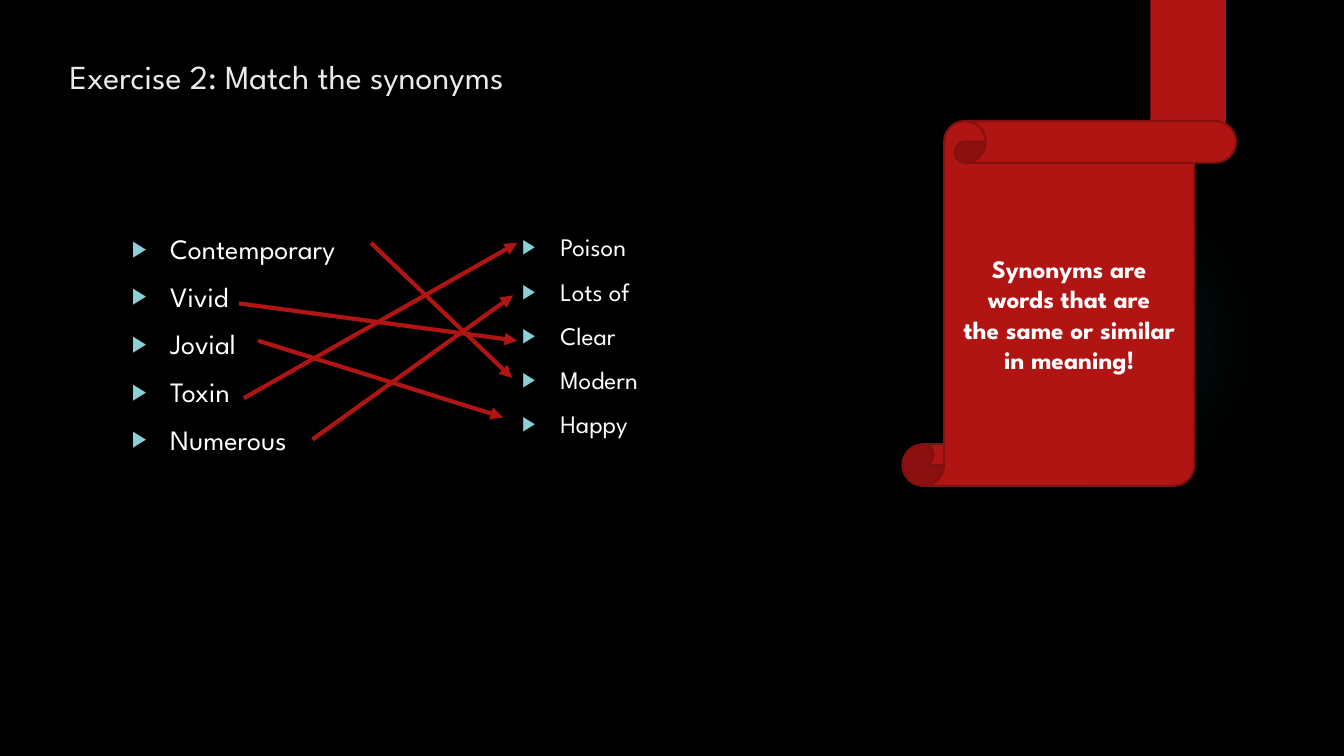
from lxml import etree
from pptx import Presentation
from pptx.dml.color import RGBColor
from pptx.enum.shapes import MSO_CONNECTOR as Connector, MSO_SHAPE as Shape
from pptx.enum.text import MSO_ANCHOR as Anchor, PP_ALIGN as Align
from pptx.oxml import parse_xml
from pptx.oxml.ns import nsdecls, qn
from pptx.util import Inches, Pt

BLACK = RGBColor(0x00, 0x00, 0x00)
WHITE = RGBColor(0xFF, 0xFF, 0xFF)
PALE = RGBColor(0xEB, 0xEB, 0xEB)
RED = RGBColor(0xB0, 0x15, 0x13)
DARK_RED = RGBColor(0x82, 0x10, 0x0E)
AQUA = RGBColor(0x8A, 0xD0, 0xD6)
TEAL = RGBColor(0x50, 0xB9, 0xC1)

FONT = "League Spartan"
LEFT_WORDS = ["Contemporary", "Vivid", "Jovial", "Toxin", "Numerous"]
RIGHT_WORDS = ["Poison", "Lots of", "Clear", "Modern", "Happy"]
MATCHES = [
    (2.47, 0.16, 3.87, 1.5),
    (1.35, 1.13, 3.78, 1.89),
    (1.16, 0.76, 3.92, 1.13),
    (1.21, 1.7, 3.92, 0.16),
    (1.89, 2.11, 3.88, 0.68),
]


def set_values(target, values):
    for name, value in values.items():
        setattr(target, name, value)


def write(para, text, size, color, bold=False):
    para.text = text
    for span in para.runs:
        set_values(span.font, {"name": FONT, "size": Pt(size), "bold": bold})
        span.font.color.rgb = color


def add_plain_shape(page, kind, left, top, width, height):
    shape = page.shapes.add_shape(
        kind, Inches(left), Inches(top), Inches(width), Inches(height))
    shape.shadow.inherit = False
    shape.fill.solid()
    shape.fill.fore_color.rgb = RED
    shape.line.fill.background()
    return shape


def add_backdrop(page, left, top, size):
    glow = add_plain_shape(page, Shape.OVAL, left, top, size, size)
    stops = "".join(
        f'<a:gs pos="{position * 1000}"><a:srgbClr val="{TEAL}">'
        f'<a:alpha val="{alpha * 1000}"/></a:srgbClr></a:gs>'
        for position, alpha in [(0, 7), (36, 6), (69, 0)])
    gradient = parse_xml(
        f'<a:gradFill {nsdecls("a")}><a:gsLst>{stops}</a:gsLst>'
        '<a:path path="circle"><a:fillToRect l="50000" t="50000" '
        'r="50000" b="50000"/></a:path></a:gradFill>')
    properties = glow.element.spPr
    properties.replace(properties.find(qn("a:solidFill")), gradient)
    add_plain_shape(page, Shape.RECTANGLE, left + 2, 0, 0.75, 1.25)


def add_title(page, left, top, width, height):
    title = page.shapes.title
    set_values(title, {"left": Inches(left), "top": Inches(top),
                       "width": Inches(width), "height": Inches(height)})
    title.text_frame.vertical_anchor = Anchor.TOP
    para = title.text_frame.paragraphs[0]
    write(para, "Exercise 2: Match the synonyms", 24, PALE)
    para.alignment = Align.LEFT


def add_bullet(para):
    properties = para._p.get_or_add_pPr()
    indent = Inches(0.38)
    properties.set("marL", str(indent))
    properties.set("indent", str(-indent))
    color = etree.SubElement(properties, qn("a:buClr"))
    etree.SubElement(color, qn("a:srgbClr"), val=str(AQUA))
    etree.SubElement(properties, qn("a:buSzPct"), val="80000")
    etree.SubElement(properties, qn("a:buFont"), typeface="Arial")
    etree.SubElement(properties, qn("a:buChar"), char="▶")


def add_word_list(page, words, size, left, top, width, height):
    box = page.shapes.add_textbox(
        Inches(left), Inches(top), Inches(width), Inches(height))
    frame = box.text_frame
    frame.word_wrap = True
    for index, word in enumerate(words):
        para = frame.add_paragraph() if index else frame.paragraphs[0]
        add_bullet(para)
        if index:
            para.space_before = Pt(10)
        write(para, word, size, WHITE)


def add_match_arrow(page, start_x, start_y, end_x, end_y):
    arrow = page.shapes.add_connector(
        Connector.STRAIGHT, Inches(start_x), Inches(start_y),
        Inches(end_x), Inches(end_y))
    arrow.line.color.rgb = RED
    arrow.line.width = Pt(3)
    etree.SubElement(arrow.line._get_or_add_ln(), qn("a:tailEnd"), type="triangle")
    etree.SubElement(arrow.element.spPr, qn("a:effectLst"))


def add_exercise(page, left, top):
    add_word_list(page, LEFT_WORDS, 20, left, top, 4.81, 4.87)
    add_word_list(page, RIGHT_WORDS, 18, left + 3.87, top, 4.81, 4.06)
    for start_x, start_y, end_x, end_y in MATCHES:
        add_match_arrow(page, left + start_x, top + start_y,
                        left + end_x, top + end_y)


def add_scroll(page, left, top, width, height):
    scroll = add_plain_shape(page, Shape.VERTICAL_SCROLL, left, top, width, height)
    scroll.line.color.rgb = DARK_RED
    scroll.line.width = Pt(1.5)
    frame = scroll.text_frame
    set_values(frame, {"word_wrap": True, "vertical_anchor": Anchor.MIDDLE})
    lines = ["Synonyms are\vwords that are", "the same or similar in meaning!"]
    for index, text in enumerate(lines):
        para = frame.add_paragraph() if index else frame.paragraphs[0]
        write(para, text, 18, WHITE, bold=True)
        para.alignment = Align.CENTER


def main():
    deck = Presentation()
    set_values(deck, {"slide_width": Inches(13.33), "slide_height": Inches(7.5)})
    page = deck.slides.add_slide(deck.slide_layouts[5])
    page.background.fill.solid()
    page.background.fill.fore_color.rgb = BLACK
    add_backdrop(page, 9.41, 1.83, 3.08)
    add_title(page, 0.59, 0.5, 10.29, 0.89)
    add_scroll(page, 8.95, 1.2, 3.31, 3.62)
    add_exercise(page, 1.21, 2.25)
    deck.save("out.pptx")


if __name__ == "__main__":
    main()
